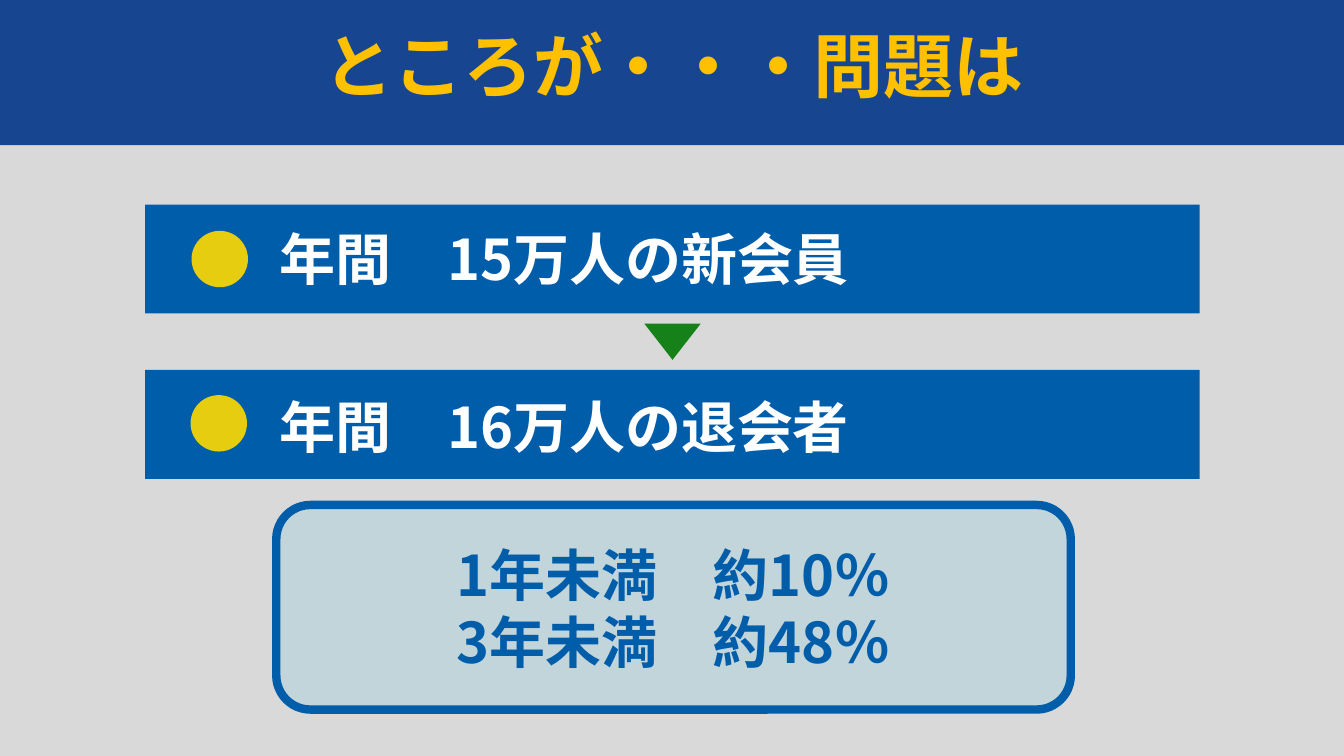
from lxml.etree import SubElement
from pptx import Presentation
from pptx.dml.color import RGBColor
from pptx.enum.shapes import MSO_SHAPE
from pptx.enum.text import MSO_ANCHOR, MSO_AUTO_SIZE, PP_ALIGN
from pptx.oxml.ns import qn
from pptx.util import Inches, Pt


def rgb(value):
    return RGBColor.from_string(value)


class Deck:
    FONT = "Noto Sans CJK JP"
    NAVY, BLUE, PALE = "17458F", "005DAA", "01B4E7"
    GOLD, YELLOW, GREEN = "FFC000", "E6CD10", "158118"
    WHITE, GREY = "FFFFFF", "D9D9D9"

    def __init__(self, prs):
        self.s = prs.slides.add_slide(prs.slide_layouts[5])
        fill = self.s.background.fill
        fill.solid()
        fill.fore_color.rgb = rgb(self.GREY)

    def shape(self, kind, box, color, alpha=None, border=None):
        sp = self.s.shapes.add_shape(kind, *map(Inches, box))
        sp.shadow.inherit = False
        sp.fill.solid()
        sp.fill.fore_color.rgb = rgb(color)
        if alpha is not None:
            clr = sp.element.spPr.find(qn("a:solidFill"))[0]
            SubElement(clr, qn("a:alpha")).set("val", str(alpha * 1000))
        if border:
            sp.line.color.rgb = rgb(border)
            sp.line.width = Pt(6)
        else:
            sp.line.fill.background()
        return sp

    def label(self, sp, lines, size, color, anchor=MSO_ANCHOR.TOP):
        tf = sp.text_frame
        tf.word_wrap = True
        tf.vertical_anchor = anchor
        tf.text = "\n".join(lines)
        for p in tf.paragraphs:
            p.alignment = PP_ALIGN.CENTER
            p.font.size = Pt(size)
            p.font.bold = True
            p.font.color.rgb = rgb(color)
            p.font.name = self.FONT
            props = p._p.pPr.find(qn("a:defRPr"))
            SubElement(props, qn("a:ea")).set("typeface", self.FONT)

    def title(self, text, box):
        sp = self.s.shapes.title
        sp.left, sp.top, sp.width, sp.height = map(Inches, box)
        self.label(sp, [text], 50, self.GOLD)
        sp.text_frame.auto_size = MSO_AUTO_SIZE.SHAPE_TO_FIT_TEXT

    def header(self):
        band = self.shape(MSO_SHAPE.RECTANGLE, (0, 0, 13.33, 1.44), self.NAVY)
        self.s.shapes.element.insert(2, band.element)

    def bar(self, top, dot, text_top, text):
        self.shape(MSO_SHAPE.RECTANGLE, (1.44, top, 10.46, 1.08), self.BLUE)
        self.shape(MSO_SHAPE.OVAL, (*dot, 0.56, 0.56), self.YELLOW)
        sp = self.s.shapes.add_textbox(*map(Inches, (2.32, text_top, 6.55, 0.77)))
        self.label(sp, [text], 40, self.WHITE)
        sp.text_frame.auto_size = MSO_AUTO_SIZE.SHAPE_TO_FIT_TEXT

    def arrow(self, box):
        sp = self.shape(MSO_SHAPE.ISOSCELES_TRIANGLE, box, self.GREEN)
        sp.rotation = 180

    def panel(self, box, lines):
        sp = self.shape(MSO_SHAPE.ROUNDED_RECTANGLE, box, self.PALE, 10, self.BLUE)
        self.label(sp, lines, 40, self.BLUE, MSO_ANCHOR.MIDDLE)


def main():
    prs = Presentation()
    prs.slide_width, prs.slide_height = Inches(13.33), Inches(7.5)
    deck = Deck(prs)
    deck.header()
    deck.title("ところが・・・問題は", (2.21, 0.17, 8.94, 0.94))
    deck.panel((2.74, 5.01, 7.88, 2.03), ["1年未満　約10％", "3年未満　約48％"])
    deck.bar(2.03, (1.9, 2.29), 2.18, "年間　15万人の新会員")
    deck.arrow((6.39, 3.21, 0.56, 0.36))
    deck.bar(3.67, (1.89, 3.92), 3.85, "年間　16万人の退会者")
    prs.save("out.pptx")


if __name__ == "__main__":
    main()
